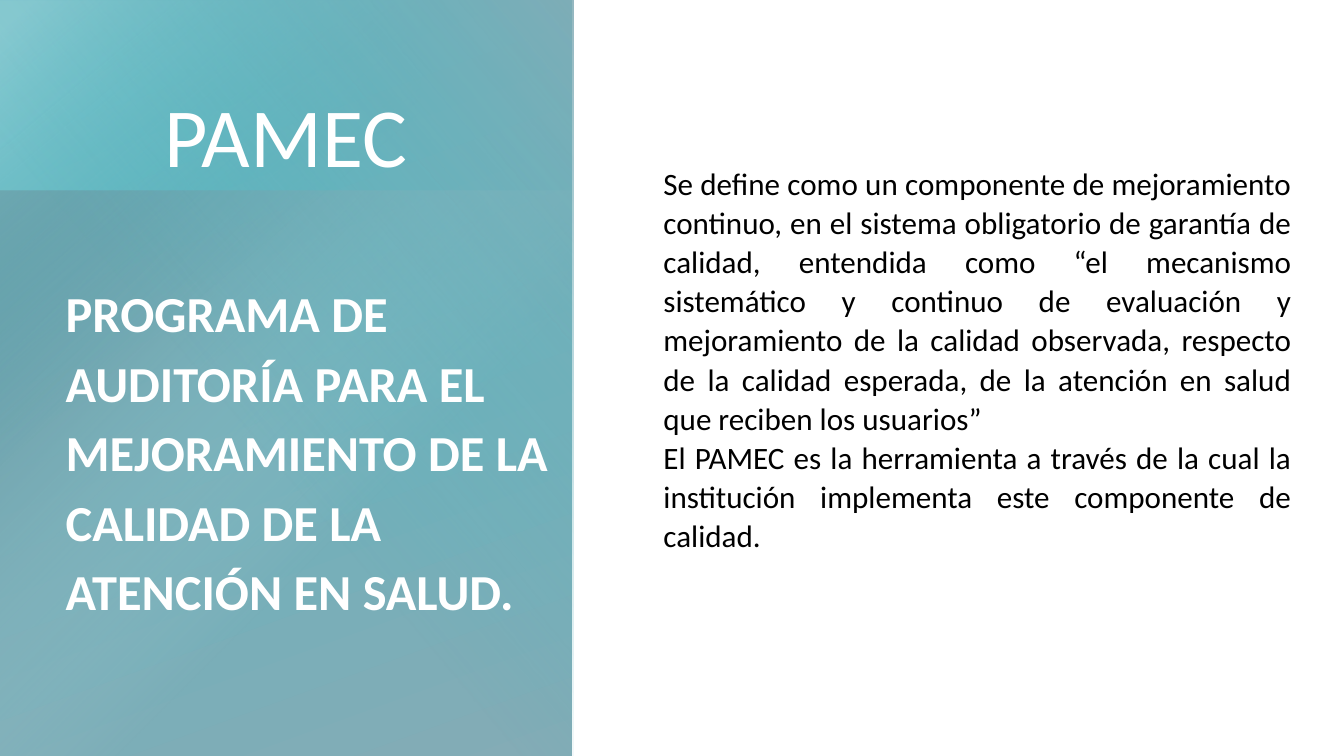
from lxml import etree
from pptx import Presentation
from pptx.dml.color import RGBColor
from pptx.enum.shapes import MSO_SHAPE
from pptx.enum.text import MSO_ANCHOR, MSO_AUTO_SIZE, PP_ALIGN
from pptx.oxml.ns import qn
from pptx.util import Inches, Pt

RECTANGLE = MSO_SHAPE.RECTANGLE
TOP = MSO_ANCHOR.TOP
NO_AUTOFIT = MSO_AUTO_SIZE.NONE
LEFT, CENTER, JUSTIFY = PP_ALIGN.LEFT, PP_ALIGN.CENTER, PP_ALIGN.JUSTIFY

SLIDE_WIDTH, SLIDE_HEIGHT = Inches(13.33), Inches(7.5)
TWO_CONTENT_LAYOUT = 3
FONT = "Calibri"
WHITE, BLACK = "FFFFFF", "000000"
TEAL, PALE_TEAL, GREY_BLUE = "58B6C0", "9AD2D8", "84ACB6"
DARK_BLUE, LIGHT_BLUE = "578793", "B4CCD3"

PANEL_LAYERS = [
    ((-0.15, 0, 42.69, 100.4), 0, 70,
     [(0, TEAL, 100), (7, TEAL, 100), (100, GREY_BLUE, 100)]),
    ((-0.15, 25.2, 42.69, 75.07), 180, None,
     [(0, DARK_BLUE, 100), (60, LIGHT_BLUE, 0), (100, LIGHT_BLUE, 0)]),
    ((-0.15, 0.13, 31.43, 100.27), 0, 50,
     [(0, PALE_TEAL, 78), (3, PALE_TEAL, 78), (42, TEAL, 0), (100, TEAL, 0)]),
    ((-6.9, 12.13, 56.41, 75.87), 270, 230,
     [(0, GREY_BLUE, 86), (57, TEAL, 0), (100, TEAL, 0)]),
]

ACRONYM = "PAMEC"
FULL_NAME = ("PROGRAMA DE AUDITORÍA PARA EL MEJORAMIENTO DE LA CALIDAD "
             "DE LA ATENCIÓN EN SALUD.")
DEFINITION = [
    "Se define como un componente de mejoramiento continuo, en el sistema "
    "obligatorio de garantía de calidad, entendida como “el mecanismo "
    "sistemático y continuo de evaluación y mejoramiento de la calidad "
    "observada, respecto de la calidad esperada, de la atención en salud "
    "que reciben los usuarios”",
    "El PAMEC es la herramienta a través de la cual la institución "
    "implementa este componente de calidad.",
]


def color(hex_code):
    """Turn a hex string into a colour."""
    return RGBColor.from_string(hex_code)


def area(left, top, width, height):
    """Turn percentages of the slide into left, top, width and height."""
    return (int(SLIDE_WIDTH * left / 100), int(SLIDE_HEIGHT * top / 100),
            int(SLIDE_WIDTH * width / 100), int(SLIDE_HEIGHT * height / 100))


def fill_gradient(layer, stops, angle):
    """Fill a layer with a linear gradient, or a circular one without angle."""
    layer.fill.gradient()
    gradient = layer.element.spPr.find(qn("a:gradFill"))
    for part in list(gradient):
        gradient.remove(part)
    gradient.set("rotWithShape", "1")
    stop_list = etree.SubElement(gradient, qn("a:gsLst"))
    for position, hex_code, opacity in stops:
        stop = etree.SubElement(stop_list, qn("a:gs"), pos=str(position * 1000))
        tint = etree.SubElement(stop, qn("a:srgbClr"), val=hex_code)
        if opacity < 100:
            etree.SubElement(tint, qn("a:alpha"), val=str(opacity * 1000))
    if angle is None:
        circle = etree.SubElement(gradient, qn("a:path"), path="circle")
        etree.SubElement(circle, qn("a:fillToRect"), r="100000", b="100000")
    else:
        etree.SubElement(gradient, qn("a:lin"), ang=str(angle * 60000), scaled="0")


def add_panel_layer(slide, place, rotation, angle, stops):
    """Add one gradient layer of the left panel."""
    layer = slide.shapes.add_shape(RECTANGLE, *area(*place))
    layer.rotation = rotation
    layer.shadow.inherit = False
    layer.line.fill.background()
    fill_gradient(layer, stops, angle)


def write_text(slide, holder, place, paragraphs, size, hex_code, alignment,
               spacing=1.0, indent=0, bold=False):
    """Place a placeholder in front of the panel and write its paragraphs."""
    slide.shapes.element.append(holder.element)
    holder.left, holder.top, holder.width, holder.height = area(*place)
    frame = holder.text_frame
    frame.text = "\n".join(paragraphs)
    frame.word_wrap = True
    frame.auto_size = NO_AUTOFIT
    frame.vertical_anchor = TOP
    frame.margin_left = frame.margin_right = Inches(0.1)
    frame.margin_top = frame.margin_bottom = Inches(0.1)
    for paragraph in frame.paragraphs:
        properties = paragraph._p.get_or_add_pPr()
        properties.set("marL", str(Inches(indent)))
        properties.set("indent", "0")
        etree.SubElement(properties, qn("a:buNone"))
        paragraph.alignment = alignment
        paragraph.line_spacing = spacing
        paragraph.space_before = paragraph.space_after = Pt(0)
        for run in paragraph.runs:
            run.font.name = FONT
            run.font.size = Pt(size)
            run.font.bold = bold
            run.font.color.rgb = color(hex_code)


def main():
    """Build the slide and save it."""
    deck = Presentation()
    deck.slide_width, deck.slide_height = SLIDE_WIDTH, SLIDE_HEIGHT
    slide = deck.slides.add_slide(deck.slide_layouts[TWO_CONTENT_LAYOUT])
    acronym, full_name, definition = slide.placeholders
    for layer in PANEL_LAYERS:
        add_panel_layer(slide, *layer)
    write_text(slide, full_name, (0.38, 34.8, 41.79, 51.47), [FULL_NAME],
               36, WHITE, LEFT, spacing=1.15, indent=0.5, bold=True)
    write_text(slide, definition, (48.61, 20.13, 48.24, 57.6), DEFINITION,
               22.2, BLACK, JUSTIFY, spacing=1.05)
    write_text(slide, acronym, (0.38, 9.73, 41.79, 15.2), [ACRONYM],
               60, WHITE, CENTER)
    deck.save("out.pptx")


if __name__ == "__main__":
    main()
